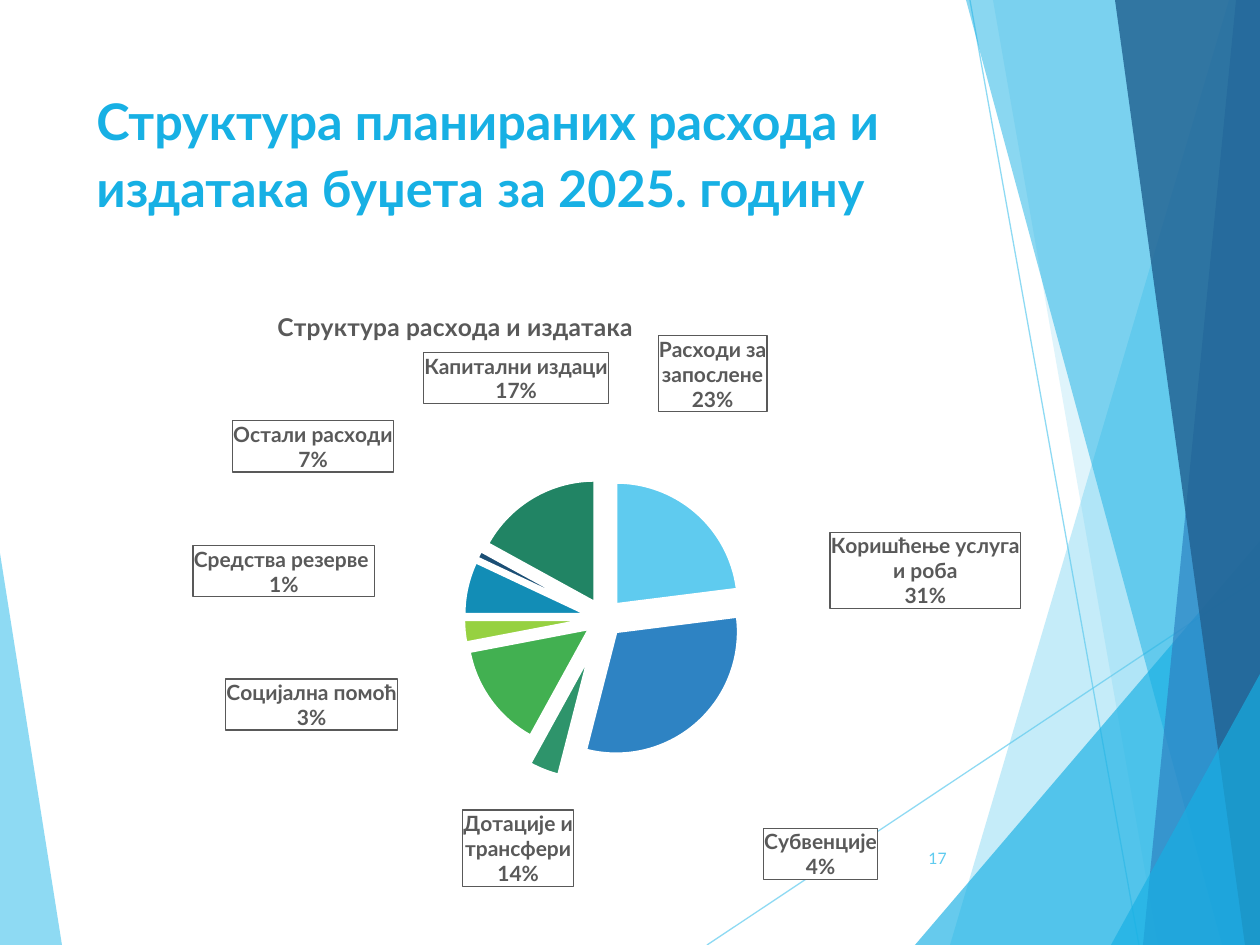
from dataclasses import dataclass
from math import cos, radians, sin

from lxml.etree import SubElement
from pptx import Presentation
from pptx.chart.data import CategoryChartData
from pptx.dml.color import RGBColor
from pptx.enum.chart import XL_CHART_TYPE
from pptx.enum.shapes import MSO_CONNECTOR
from pptx.enum.text import MSO_ANCHOR, PP_ALIGN
from pptx.oxml import parse_xml
from pptx.oxml.ns import nsdecls, qn
from pptx.util import Emu, Pt

SCALE = 914400 / 126
WIDTH, HEIGHT = 1260, 945
FONT = "Lato"
SKY = RGBColor(0x5F, 0xCB, 0xEF)
CYAN = RGBColor(0x17, 0xB0, 0xE4)
BLUE = RGBColor(0x2E, 0x83, 0xC3)
NAVY = RGBColor(0x22, 0x62, 0x92)
WHITE = RGBColor(0xFF, 0xFF, 0xFF)
GREY = RGBColor(0x59, 0x59, 0x59)

CHART_BOX = (84, 295, 1016, 592)
PLOT_LAYOUT = (0.244, 0.309, 0.536, 0.474)
TITLE_POSITION = (0.186, 0.015)
EXPLOSION = 15
LABEL_GAP = 7


@dataclass
class Facet:
    points: list[tuple[int, int]]
    color: RGBColor
    opacity: int


@dataclass
class Ray:
    start: tuple[int, int]
    end: tuple[int, int]


@dataclass
class Slice:
    name: str
    percent: int
    color: RGBColor
    label_box: tuple[int, int, int, int]
    explosion: int = EXPLOSION


LEFT_FACET = Facet([(0, 553), (62, HEIGHT), (0, HEIGHT)], SKY, 70)
RAYS = [Ray((707, 945), (1260, 577)), Ray((970, 0), (1139, 945))]
RIGHT_FACETS = [
    Facet([(1229, 0), (950, 945), (1260, 945), (1260, 0)], SKY, 36),
    Facet([(993, 0), (1158, 945), (1260, 945), (1260, 0)], SKY, 20),
    Facet([(915, 945), (1260, 541), (1260, 945)], CYAN, 66),
    Facet([(966, 0), (1222, 945), (1260, 945), (1260, 0)], CYAN, 50),
    Facet([(1236, 0), (1143, 945), (1260, 945), (1260, 0)], BLUE, 70),
    Facet([(1115, 0), (1245, 945), (1260, 945), (1260, 0)], NAVY, 82),
    Facet([(1111, 945), (1260, 674), (1260, 945)], CYAN, 66),
]
SLICES = [
    Slice("Расходи за запослене", 23, SKY, (658, 336, 110, 76)),
    Slice("Коришћење услуга и роба", 31, BLUE, (830, 532, 191, 76)),
    Slice("Отплата камата", 0, RGBColor(0x42, 0xD0, 0xA2), (831, 719, 161, 52)),
    Slice("Субвенције", 4, RGBColor(0x2E, 0x94, 0x6B), (764, 828, 114, 52), 34),
    Slice("Дотације и трансфери", 14, RGBColor(0x42, 0xB0, 0x51), (463, 810, 111, 77)),
    Slice("Социјална помоћ", 3, RGBColor(0x96, 0xD1, 0x41), (226, 679, 172, 52)),
    Slice("Остали расходи", 7, RGBColor(0x12, 0x8D, 0xB6), (233, 421, 161, 51)),
    Slice("Средства резерве ", 1, RGBColor(0x1C, 0x4F, 0x75), (193, 545, 182, 52)),
    Slice("Капитални издаци", 17, RGBColor(0x21, 0x84, 0x64), (424, 352, 185, 52)),
]


def px(value: float) -> Emu:
    return Emu(round(value * SCALE))


def set_alpha(shape, opacity: int) -> None:
    for color in shape._element.spPr.iter(qn("a:srgbClr")):
        SubElement(color, qn("a:alpha")).set("val", str(opacity * 1000))


def style_font(font, size: float, color: RGBColor, bold: bool = False) -> None:
    font.name, font.size, font.bold = FONT, Pt(size), bold
    font.color.rgb = color


def draw_facet(slide, facet: Facet) -> None:
    builder = slide.shapes.build_freeform(*facet.points[0], scale=SCALE)
    builder.add_line_segments(facet.points[1:], close=True)
    shape = builder.convert_to_shape()
    shape.shadow.inherit = False
    shape.fill.solid()
    shape.fill.fore_color.rgb = facet.color
    shape.line.fill.background()
    set_alpha(shape, facet.opacity)


def draw_ray(slide, ray: Ray) -> None:
    corners = [px(value) for value in ray.start + ray.end]
    connector = slide.shapes.add_connector(MSO_CONNECTOR.STRAIGHT, *corners)
    connector.line.color.rgb = SKY
    connector.line.width = Pt(0.75)
    set_alpha(connector, 70)
    SubElement(connector._element.spPr, qn("a:effectLst"))


def add_text_frame(slide, box: tuple[int, int, int, int]):
    frame = slide.shapes.add_textbox(*map(px, box)).text_frame
    frame.word_wrap = True
    return frame


def draw_title(slide) -> None:
    paragraph = add_text_frame(slide, (84, 84, 875, 182)).paragraphs[0]
    parts = [("Структура планираних расхода и издатака буџета", 28.8),
             (" ", 32.4), ("за 2025. годину", 28.8)]
    for text, size in parts:
        run = paragraph.add_run()
        run.text = text
        style_font(run.font, size, CYAN, True)


def draw_page_number(slide) -> None:
    frame = add_text_frame(slide, (888, 833, 71, 50))
    frame.vertical_anchor = MSO_ANCHOR.MIDDLE
    frame.text = "17"
    paragraph = frame.paragraphs[0]
    paragraph.alignment = PP_ALIGN.RIGHT
    style_font(paragraph.runs[0].font, 9, SKY)


def layout_xml(x: float, y: float, extra: str = "", modes: str = "") -> str:
    return (f'<c:layout {nsdecls("c")}><c:manualLayout>{modes}'
            f'<c:x val="{x:.4f}"/><c:y val="{y:.4f}"/>{extra}</c:manualLayout></c:layout>')


EDGE_MODES = '<c:xMode val="edge"/><c:yMode val="edge"/>'
LABEL_STYLE = f'''<c:numFmt formatCode="0%" sourceLinked="0"/>
<c:spPr><a:solidFill><a:srgbClr val="{WHITE}"/></a:solidFill>
<a:ln w="9525"><a:solidFill><a:srgbClr val="{GREY}"/></a:solidFill></a:ln></c:spPr>
<c:txPr><a:bodyPr/><a:p><a:pPr><a:defRPr sz="1200" b="1">
<a:solidFill><a:srgbClr val="{GREY}"/></a:solidFill><a:latin typeface="{FONT}"/>
</a:defRPr></a:pPr><a:endParaRPr lang="sr-Cyrl-RS"/></a:p></c:txPr>
<c:dLblPos val="outEnd"/><c:showLegendKey val="0"/><c:showVal val="0"/>
<c:showCatName val="1"/><c:showSerName val="0"/><c:showPercent val="1"/>
<c:showBubbleSize val="0"/><c:separator>\n</c:separator>'''


def label_offset(part: Slice, before: int) -> tuple[float, float]:
    left, top, width, height = CHART_BOX
    x, y, plot_width, plot_height = PLOT_LAYOUT
    center_x = left + (x + plot_width / 2) * width
    center_y = top + (y + plot_height / 2) * height
    radius = plot_height * height / 2 / (1 + EXPLOSION / 100)
    reach = radius * (1 + part.explosion / 100) + LABEL_GAP
    angle = radians((before + part.percent / 2) * 3.6)
    box_left, box_top, box_width, box_height = part.label_box
    default_left = center_x + reach * sin(angle) - (box_width if sin(angle) < 0 else 0)
    default_top = center_y - reach * cos(angle) - (box_height if cos(angle) > 0 else 0)
    return (box_left - default_left) / width, (box_top - default_top) / height


def labels_xml() -> str:
    labels, before = "", 0
    for index, part in enumerate(SLICES):
        layout = layout_xml(*label_offset(part, before))
        labels += f'<c:dLbl><c:idx val="{index}"/>{layout}{LABEL_STYLE}</c:dLbl>'
        before += part.percent
    return (f'<c:dLbls {nsdecls("c", "a")}>{labels}{LABEL_STYLE}'
            '<c:showLeaderLines val="0"/></c:dLbls>')


def explosion_element(percent: int):
    return parse_xml(f'<c:explosion {nsdecls("c")} val="{percent}"/>')


def draw_pie(slide) -> None:
    data = CategoryChartData()
    data.categories = [part.name for part in SLICES]
    data.add_series("Series 1", [part.percent for part in SLICES])
    chart = slide.shapes.add_chart(XL_CHART_TYPE.PIE, *map(px, CHART_BOX), data).chart
    chart.font.name, chart.font.size = FONT, Pt(10)
    chart.has_legend = False
    chart.has_title = True
    chart.chart_title.text_frame.text = "Структура расхода и издатака"
    style_font(chart.chart_title.text_frame.paragraphs[0].runs[0].font, 14, GREY, True)
    title = chart.chart_title._element
    for old in title.findall(qn("c:layout")):
        title.remove(old)
    title.find(qn("c:tx")).addnext(parse_xml(layout_xml(*TITLE_POSITION, modes=EDGE_MODES)))

    series = chart.plots[0].series[0]
    for index, part in enumerate(SLICES):
        point_format = series.points[index].format
        point_format.fill.solid()
        point_format.fill.fore_color.rgb = part.color
        point_format.line.color.rgb = WHITE
        point_format.line.width = Pt(1.5)
    points = series._element.findall(qn("c:dPt"))
    for point, part in zip(points, SLICES):
        point.find(qn("c:spPr")).addprevious(explosion_element(part.explosion))
    points[0].addprevious(explosion_element(EXPLOSION))
    labels = series.data_labels._element
    labels.getparent().replace(labels, parse_xml(labels_xml()))

    x, y, width, height = PLOT_LAYOUT
    plot_area = chart._chartSpace.chart.plotArea
    for old in plot_area.findall(qn("c:layout")):
        plot_area.remove(old)
    size = f'<c:w val="{width}"/><c:h val="{height}"/>'
    modes = '<c:layoutTarget val="inner"/>' + EDGE_MODES
    plot_area.insert(0, parse_xml(layout_xml(x, y, size, modes)))


def main() -> None:
    presentation = Presentation()
    presentation.slide_width, presentation.slide_height = px(WIDTH), px(HEIGHT)
    slide = presentation.slides.add_slide(presentation.slide_layouts[6])
    draw_facet(slide, LEFT_FACET)
    for ray in RAYS:
        draw_ray(slide, ray)
    for facet in RIGHT_FACETS:
        draw_facet(slide, facet)
    draw_title(slide)
    draw_page_number(slide)
    draw_pie(slide)
    presentation.save("out.pptx")


if __name__ == "__main__":
    main()
